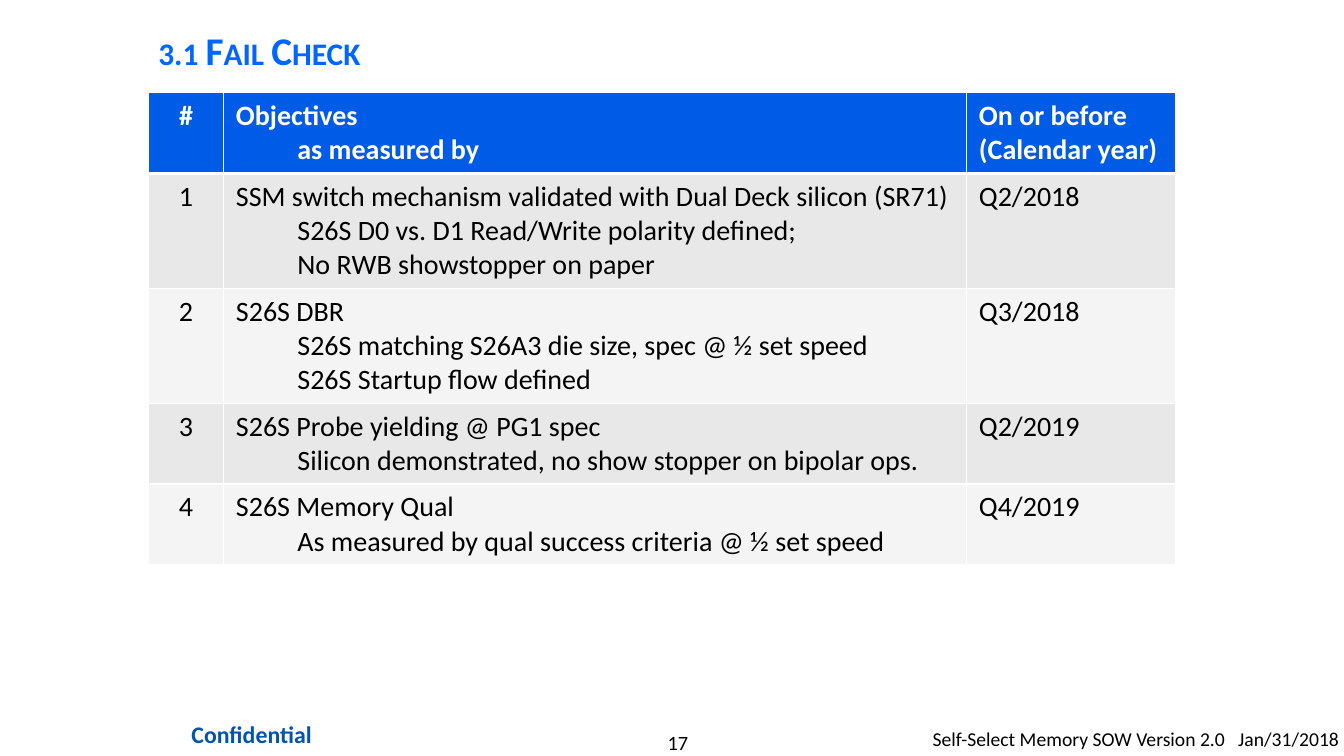
from lxml import etree
from pptx import Presentation
from pptx.dml.color import RGBColor
from pptx.enum.text import MSO_ANCHOR, MSO_AUTO_SIZE, PP_ALIGN
from pptx.oxml.ns import qn
from pptx.util import Inches, Pt

LEFT, CENTER = PP_ALIGN.LEFT, PP_ALIGN.CENTER
MIDDLE, FIXED = MSO_ANCHOR.MIDDLE, MSO_AUTO_SIZE.NONE
WHITE = RGBColor(0xFF, 0xFF, 0xFF)
BLACK = RGBColor(0, 0, 0)
TITLE = RGBColor(0x00, 0x66, 0xFF)
HEAD = RGBColor(0x00, 0x5C, 0xE7)
NAVY = RGBColor(0x00, 0x54, 0xB0)
BANDS = [RGBColor(0xE8, 0xE8, 0xE8), RGBColor(0xF4, 0xF4, 0xF4)]

# Content: each cell is a list of lines
ROWS = [
    (["#"], ["Objectives", "as measured by"],
     ["On or before", "(Calendar year)"]),
    (["1"], ["SSM switch mechanism validated with Dual Deck silicon (SR71)",
             "S26S D0 vs. D1 Read/Write polarity defined;",
             "No RWB showstopper on paper"], ["Q2/2018"]),
    (["2"], ["S26S DBR", "S26S matching S26A3 die size, spec @ ½ set speed",
             "S26S Startup flow defined"], ["Q3/2018"]),
    (["3"], ["S26S Probe yielding @ PG1 spec",
             "Silicon demonstrated, no show stopper on bipolar ops."],
     ["Q2/2019"]),
    (["4"], ["S26S Memory Qual",
             "As measured by qual success criteria @ ½ set speed"],
     ["Q4/2019"]),
]
WIDTHS = [0.75, 7.37, 2.07]
GOAL = 1  # column whose later lines are indented
PAD_X, PAD_Y, LINE = 0.12, 0.06, 0.34

# Footer: text, box, side and top insets, alignment, font
FOOTER = [
    ("17", (5.56, 7.24, 2.33, 0.24), (0, 0), CENTER,
     {"size": Pt(14.5), "bold": False, "color": BLACK}),
    ("Confidential", (1.55, 7.08, 1.89, 0.41), (PAD_X, PAD_Y), CENTER,
     {"size": Pt(17), "bold": True, "color": NAVY}),
    ("Self-Select Memory SOW Version 2.0   Jan/31/2018",
     (9.25, 7.16, 4.08, 0.34), (0, 0.05), LEFT,
     {"size": Pt(14), "bold": False, "color": BLACK}),
]


def style(font, form):
    font.name = "Calibri"
    for key, val in form.items():
        if key == "color":
            font.color.rgb = val
        else:
            setattr(font, key, val)


def inset(box, x, y):
    box.margin_left = box.margin_right = Inches(x)
    box.margin_top = box.margin_bottom = Inches(y)


def edge(cell, side, width):
    props = cell._tc.get_or_add_tcPr()
    line = etree.SubElement(props, qn(f"a:ln{side}"), w=str(Pt(width)))
    fill = etree.SubElement(line, qn("a:solidFill"))
    etree.SubElement(fill, qn("a:srgbClr"), val=str(WHITE))


deck = Presentation()
deck.slide_width, deck.slide_height = Inches(13.33), Inches(7.5)
slide = deck.slides.add_slide(deck.slide_layouts[5])

# Title
title = slide.shapes.title
title.left, title.top = Inches(1.47), Inches(0.17)
title.width, title.height = Inches(11.33), Inches(0.65)
frame = title.text_frame
frame.text = "3.1 Fail Check"
frame.auto_size, frame.vertical_anchor = FIXED, MIDDLE
para = frame.paragraphs[0]
para.alignment = LEFT
run = para.runs[0]
style(run.font, {"size": Pt(28), "bold": True, "color": TITLE})
run._r.get_or_add_rPr().set("cap", "small")

# Table: row height follows the longest cell
highs = [2 * PAD_Y + LINE * max(map(len, row)) for row in ROWS]
table = slide.shapes.add_table(
    len(ROWS), len(WIDTHS), Inches(1.47), Inches(0.92),
    Inches(sum(WIDTHS)), Inches(sum(highs))).table
for col, width in zip(table.columns, WIDTHS):
    col.width = Inches(width)
for r, row in enumerate(ROWS):
    table.rows[r].height = Inches(highs[r])
    top = r == 0
    form = {"size": Pt(20), "bold": top, "color": WHITE if top else BLACK}
    for c, lines in enumerate(row):
        cell = table.cell(r, c)
        inset(cell, PAD_X, PAD_Y)
        for side in "LRTB":
            thick = (top and side == "B") or (r == 1 and side == "T")
            edge(cell, side, 3 if thick else 1)
        cell.fill.solid()
        cell.fill.fore_color.rgb = HEAD if top else BANDS[(r - 1) % 2]
        cell.text_frame.text = "\n".join(lines)
        for n, para in enumerate(cell.text_frame.paragraphs):
            para.alignment = CENTER if c == 0 else LEFT
            if c == GOAL and n:
                para.level = 1
                para._p.get_or_add_pPr().set("marL", str(Inches(0.61)))
            style(para.runs[0].font, form)

# Footer
for text, place, pad, align, form in FOOTER:
    box = slide.shapes.add_textbox(*map(Inches, place))
    frame = box.text_frame
    frame.word_wrap = True
    inset(frame, *pad)
    frame.text = text
    para = frame.paragraphs[0]
    para.alignment = align
    style(para.runs[0].font, form)

deck.save("out.pptx")
